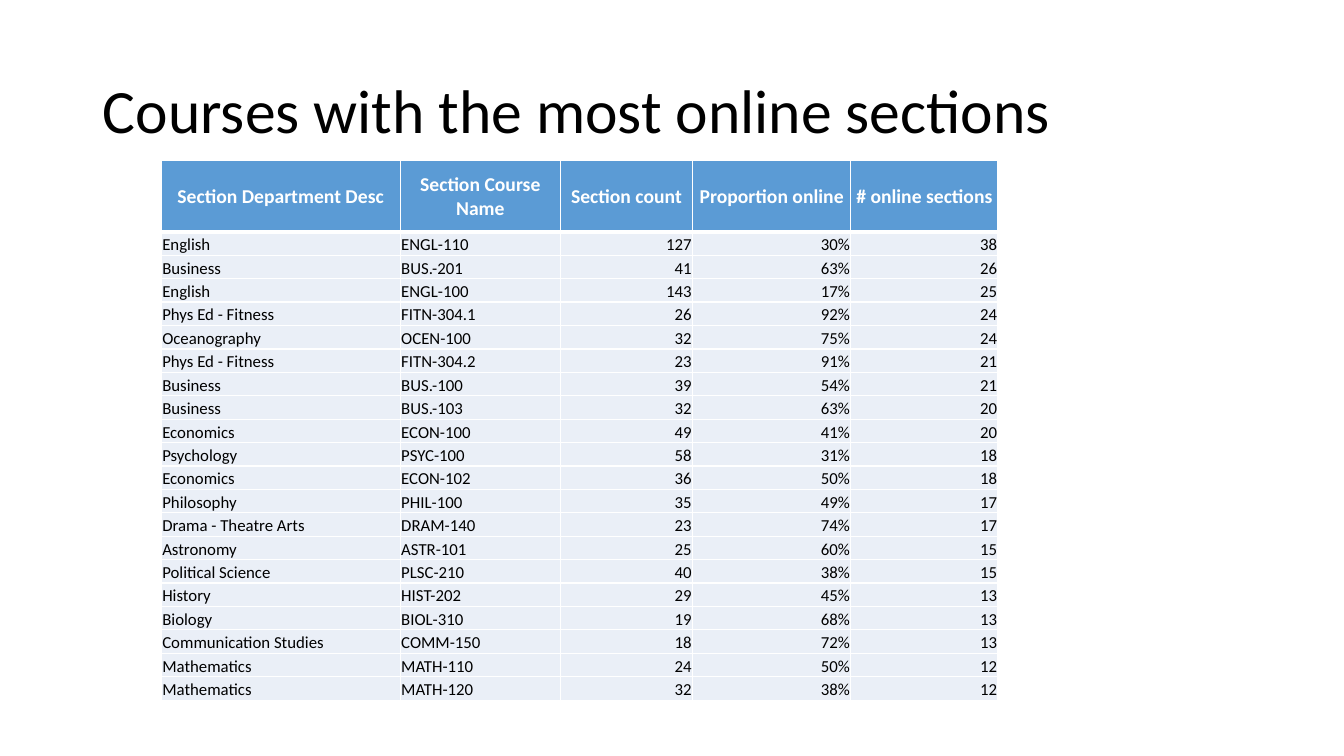
from lxml.etree import SubElement
from pptx import Presentation
from pptx.dml.color import RGBColor
from pptx.enum.text import MSO_ANCHOR, MSO_AUTO_SIZE, PP_ALIGN
from pptx.oxml.ns import qn
from pptx.util import Inches, Pt

hues = {"head": "5B9BD5", "body": "EAEFF7", "white": "FFFFFF", "black": "000000"}
widths = [2.37, 1.59, 1.31, 1.57, 1.46]
top_row, row_step = 0.71, 0.2325
heads = ["Section Department Desc", "Section Course Name", "Section count",
         "Proportion online", "# online sections"]
courses = [
    ("English", "ENGL-110", 127, "30%", 38),
    ("Business", "BUS.-201", 41, "63%", 26),
    ("English", "ENGL-100", 143, "17%", 25),
    ("Phys Ed - Fitness", "FITN-304.1", 26, "92%", 24),
    ("Oceanography", "OCEN-100", 32, "75%", 24),
    ("Phys Ed - Fitness", "FITN-304.2", 23, "91%", 21),
    ("Business", "BUS.-100", 39, "54%", 21),
    ("Business", "BUS.-103", 32, "63%", 20),
    ("Economics", "ECON-100", 49, "41%", 20),
    ("Psychology", "PSYC-100", 58, "31%", 18),
    ("Economics", "ECON-102", 36, "50%", 18),
    ("Philosophy", "PHIL-100", 35, "49%", 17),
    ("Drama - Theatre Arts", "DRAM-140", 23, "74%", 17),
    ("Astronomy", "ASTR-101", 25, "60%", 15),
    ("Political Science", "PLSC-210", 40, "38%", 15),
    ("History", "HIST-202", 29, "45%", 13),
    ("Biology", "BIOL-310", 19, "68%", 13),
    ("Communication Studies", "COMM-150", 18, "72%", 13),
    ("Mathematics", "MATH-110", 24, "50%", 12),
    ("Mathematics", "MATH-120", 32, "38%", 12),
]


def style(para, size, hue, align, bold=False):
    para.alignment = align
    font = para.font
    font.name, font.size, font.bold = "Calibri", Pt(size), bold
    font.color.rgb = RGBColor.from_string(hues[hue])


def edge(cell, side, points):
    line = SubElement(cell._tc.get_or_add_tcPr(), qn(f"a:ln{side}"), w=str(Pt(points)))
    fill = SubElement(line, qn("a:solidFill"))
    SubElement(fill, qn("a:srgbClr"), val=hues["white"])


deck = Presentation()
deck.slide_width, deck.slide_height = Inches(13.33), Inches(7.5)
slide = deck.slides.add_slide(deck.slide_layouts[5])

title = slide.shapes.title
title.left, title.top = Inches(0.92), Inches(0.4)
title.width, title.height = Inches(11.5), Inches(1.45)
frame = title.text_frame
frame.text = "Courses with the most online sections"
frame.word_wrap = True
frame.auto_size = MSO_AUTO_SIZE.NONE
frame.vertical_anchor = MSO_ANCHOR.MIDDLE
para = frame.paragraphs[0]
para.line_spacing = 0.9
style(para, 44, "black", PP_ALIGN.LEFT)

rows = [heads, *courses]
height = top_row + row_step * len(courses)
table = slide.shapes.add_table(len(rows), len(heads), Inches(1.6), Inches(1.59),
                               Inches(sum(widths)), Inches(height)).table
table.horz_banding = False
for col, width in zip(table.columns, widths):
    col.width = Inches(width)

for r, values in enumerate(rows):
    first = r == 0
    table.rows[r].height = Inches(top_row if first else row_step)
    for c, value in enumerate(values):
        cell = table.cell(r, c)
        cell.text = str(value)
        cell.margin_left = cell.margin_right = cell.margin_top = Inches(0.01)
        cell.margin_bottom = 0
        for side in "LRTB":
            thick = first and side == "B" or r == 1 and side == "T"
            edge(cell, side, 3 if thick else 1)
        cell.fill.solid()
        cell.fill.fore_color.rgb = RGBColor.from_string(hues["head" if first else "body"])
        para = cell.text_frame.paragraphs[0]
        if first:
            cell.vertical_anchor = MSO_ANCHOR.MIDDLE
            style(para, 14, "white", PP_ALIGN.CENTER, True)
        else:
            cell.vertical_anchor = MSO_ANCHOR.BOTTOM
            style(para, 12, "black", PP_ALIGN.LEFT if c < 2 else PP_ALIGN.RIGHT)

deck.save("out.pptx")
